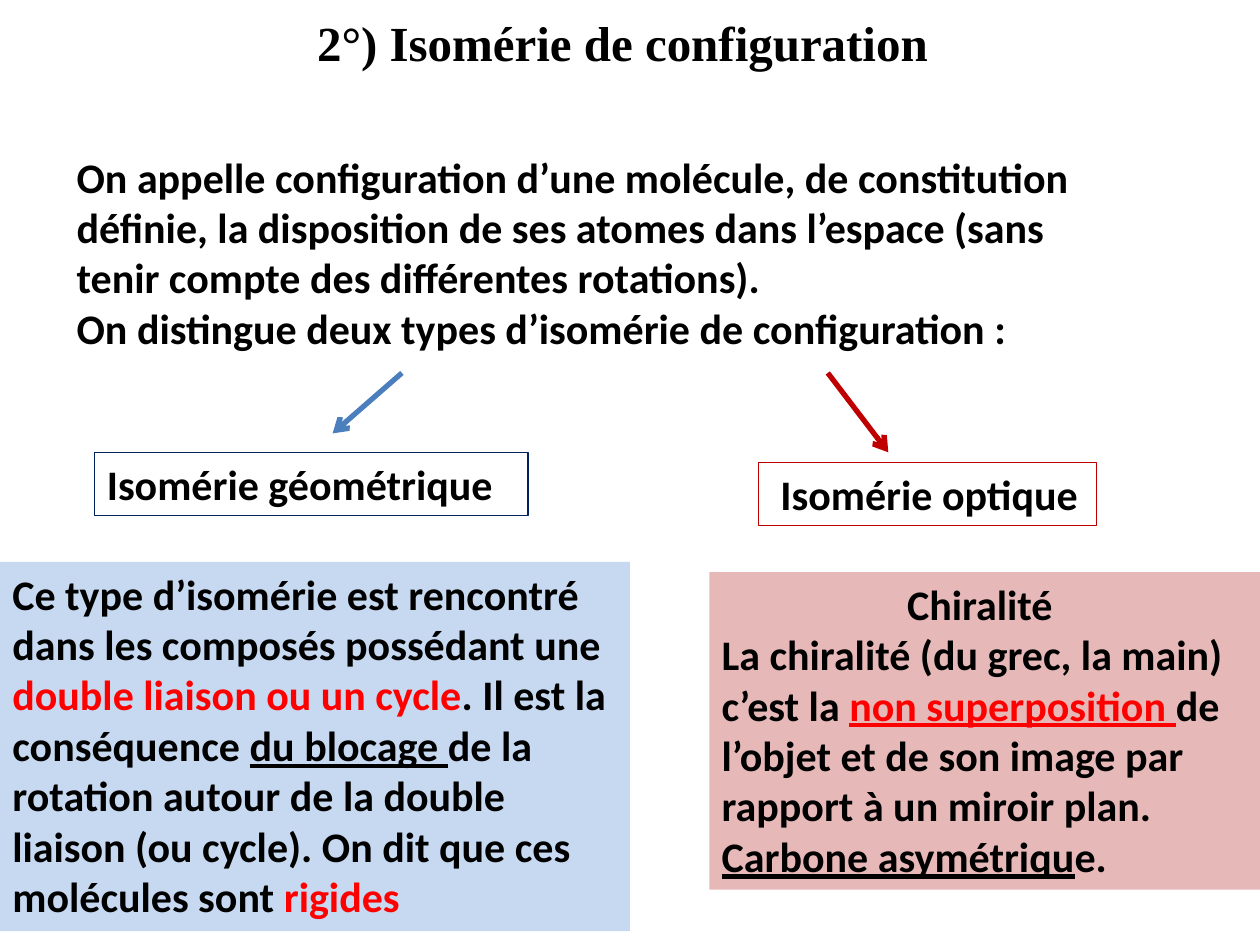
from pptx import Presentation
from pptx.dml.color import RGBColor
from pptx.enum.shapes import MSO_CONNECTOR as Connector, MSO_SHAPE as Shape
from pptx.enum.text import MSO_ANCHOR as Anchor, MSO_AUTO_SIZE as AutoSize, PP_ALIGN as Align
from pptx.oxml.ns import qn
from pptx.util import Pt
from lxml.etree import SubElement

EMU_PER_PX = 9144  # 100 px to the inch

BLACK = RGBColor(0x00, 0x00, 0x00)
RED = RGBColor(0xFF, 0x00, 0x00)
NAVY = RGBColor(0x00, 0x20, 0x60)
BLUE = RGBColor(0x4B, 0x7E, 0xBC)
CRIMSON = RGBColor(0xC0, 0x00, 0x00)
PALE_BLUE = RGBColor(0xC6, 0xD9, 0xF1)
PALE_RED = RGBColor(0xE6, 0xB9, 0xB8)


def px(*lengths):
    return [length * EMU_PER_PX for length in lengths]


class SlideBuilder:
    body = {"name": "Calibri", "size": Pt(24), "bold": True}
    title = {"name": "Times New Roman", "size": Pt(28), "bold": True}

    def __init__(self, presentation):
        self.slide = presentation.slides.add_slide(presentation.slide_layouts[6])

    def fill_text(self, shape, paragraphs, style=None, wrap=True, first_align=Align.LEFT):
        """Each paragraph is a list of (text, colour, underline) runs."""
        frame = shape.text_frame
        settings = {"word_wrap": wrap, "auto_size": AutoSize.SHAPE_TO_FIT_TEXT,
                    "vertical_anchor": Anchor.TOP}
        for key, value in settings.items():
            setattr(frame, key, value)
        for index, runs in enumerate(paragraphs):
            paragraph = frame.add_paragraph() if index else frame.paragraphs[0]
            paragraph.alignment = Align.LEFT if index else first_align
            for text, colour, underline in runs:
                run = paragraph.add_run()
                run.text = text
                for key, value in {**(style or self.body), "underline": underline}.items():
                    setattr(run.font, key, value)
                run.font.color.rgb = colour

    def text(self, box, paragraphs, **options):
        self.fill_text(self.slide.shapes.add_textbox(*px(*box)), paragraphs, **options)

    def panel(self, box, paragraphs, fill=None, line=None, **options):
        shape = self.slide.shapes.add_shape(Shape.RECTANGLE, *px(*box))
        shape.shadow.inherit = False
        for part, colour in ((shape.fill, fill), (shape.line.fill, line)):
            if colour is None:
                part.background()
            else:
                part.solid()
                part.fore_color.rgb = colour
        if line is not None:
            shape.line.width = Pt(0.75)
        self.fill_text(shape, paragraphs, **options)

    def arrow(self, start, end, colour):
        connector = self.slide.shapes.add_connector(Connector.STRAIGHT, *px(*start, *end))
        connector.line.color.rgb = colour
        connector.line.width = Pt(3)
        properties = connector._element.spPr
        SubElement(properties.find(qn("a:ln")), qn("a:tailEnd"), type="arrow")
        SubElement(properties, qn("a:effectLst"))


def plain(text):
    return text, BLACK, False


def main():
    presentation = Presentation()
    presentation.slide_width, presentation.slide_height = px(1000, 750)
    builder = SlideBuilder(presentation)

    # Title and definition
    builder.text((239, 5, 510, 57), [[plain("2°) Isomérie de configuration")]],
                 style=builder.title, wrap=False, first_align=Align.CENTER)
    builder.text((51, 115, 850, 172), [
        [plain("On appelle configuration d’une molécule, de constitution définie, la disposition "
               "de ses atomes dans l’espace (sans tenir compte des différentes rotations).")],
        [plain("On distingue deux types d’isomérie de configuration :")],
    ])

    # The two types of isomerism
    builder.panel((75, 359, 344, 50), [[plain("Isomérie géométrique")]], line=NAVY)
    builder.panel((602, 367, 268, 50), [[plain(" Isomérie optique")]], line=CRIMSON)
    builder.arrow((319, 296), (264, 344), BLUE)
    builder.arrow((657, 296), (705, 359), CRIMSON)

    # Explanations
    builder.panel((0, 446, 500, 293), [[
        plain("Ce type d’isomérie est rencontré dans les composés possédant une "),
        ("double liaison ou un cycle", RED, False),
        plain(". Il est la conséquence "),
        ("du blocage ", BLACK, True),
        plain("de la rotation autour de la double liaison (ou cycle). "
              "On dit que ces molécules sont "),
        ("rigides", RED, False),
    ]], fill=PALE_BLUE)
    builder.panel((563, 454, 437, 252), [
        [plain("Chiralité ")],
        [plain("La chiralité (du grec, la main) c’est la "),
         ("non superposition ", RED, True),
         plain("de l’objet et de son image par rapport à un miroir plan.")],
        [("Carbone asymétriqu", BLACK, True), plain("e.")],
    ], fill=PALE_RED, first_align=Align.CENTER)

    presentation.save("out.pptx")


if __name__ == "__main__":
    main()
